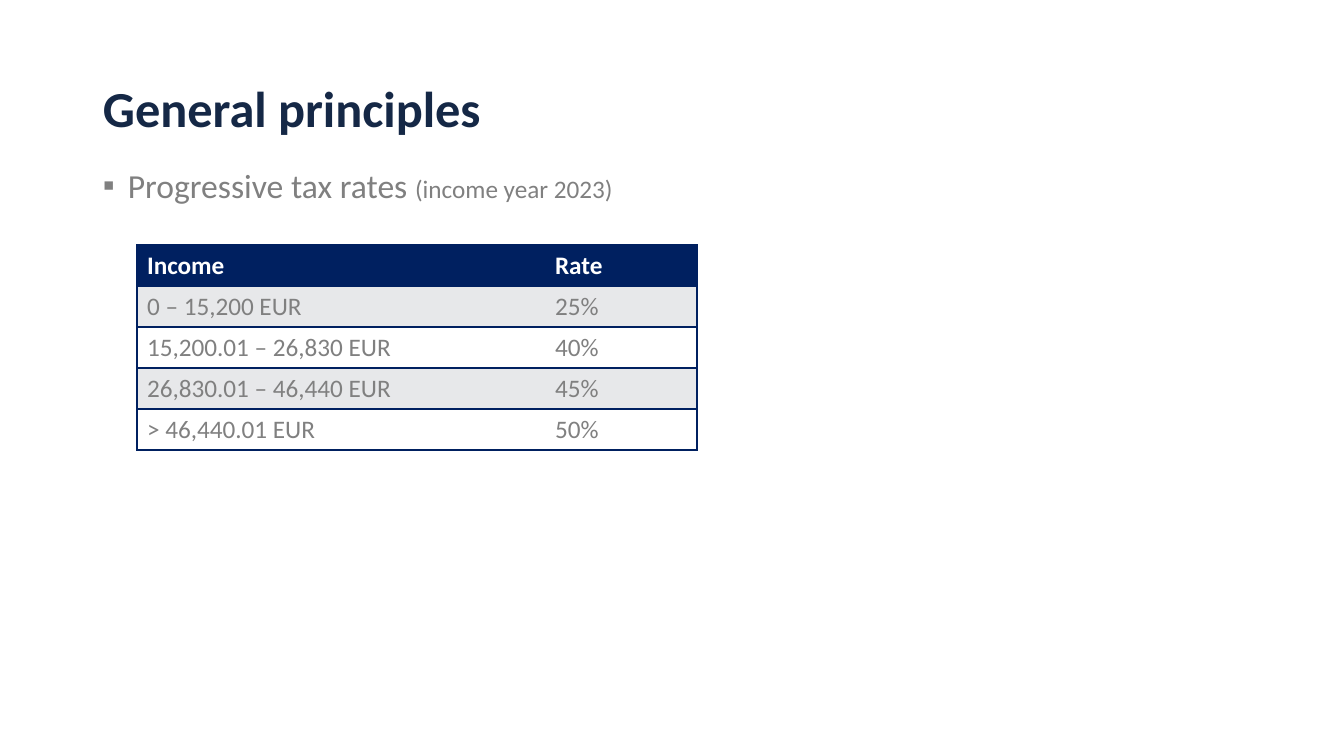
from lxml.etree import SubElement
from pptx import Presentation
from pptx.dml.color import RGBColor
from pptx.enum.text import MSO_ANCHOR
from pptx.oxml import parse_xml
from pptx.oxml.ns import nsdecls, qn
from pptx.util import Emu, Pt

EMU_PER_PX = 914400 / 100.8
NAVY = RGBColor(0x00, 0x20, 0x60)
TITLE_NAVY = RGBColor(0x15, 0x28, 0x46)
GRAY = RGBColor(0x80, 0x80, 0x80)
BAND_GRAY = RGBColor(0xE7, 0xE8, 0xEA)
WHITE = RGBColor(0xFF, 0xFF, 0xFF)
NO_STYLE = "{2D5ABB26-0587-4C30-8999-92F81FD0307C}"


def px(value):
    return Emu(round(value * EMU_PER_PX))


def add_text(paragraph, text, size=18, color=GRAY, bold=False):
    run = paragraph.add_run()
    run.text = text
    run.font.name = "Calibri"
    run.font.size = Pt(size)
    run.font.color.rgb = color
    run.font.bold = bold


presentation = Presentation()
presentation.slide_width, presentation.slide_height = px(1344), px(756)
slide = presentation.slides.add_slide(presentation.slide_layouts[6])

# Title and bullet text
paragraphs = []
for top, height, anchor in [(77, 69, MSO_ANCHOR.MIDDLE), (164, 515, MSO_ANCHOR.TOP)]:
    text_box = slide.shapes.add_textbox(px(93), px(top), px(1159), px(height))
    text_box.text_frame.word_wrap = True
    text_box.text_frame.vertical_anchor = anchor
    paragraph = text_box.text_frame.paragraphs[0]
    paragraph.line_spacing = 0.9
    paragraphs.append(paragraph)
title, bullet = paragraphs

add_text(title, "General principles", size=36, color=TITLE_NAVY, bold=True)

properties = bullet._p.get_or_add_pPr()
properties.set("marL", str(px(25)))
properties.set("indent", str(-px(25)))
SubElement(properties, qn("a:buFont"), typeface="Arial")
SubElement(properties, qn("a:buChar"), char="▪")
add_text(bullet, "Progressive tax rates ", size=24)
add_text(bullet, "(income year 2023)")

# Tax rate table
tax_rates = [
    ("Income", "Rate"),
    ("0 – 15,200 EUR", "25%"),
    ("15,200.01 – 26,830 EUR", "40%"),
    ("26,830.01 – 46,440 EUR", "45%"),
    ("> 46,440.01 EUR", "50%"),
]
column_widths = [408, 152]
row_height = 41
table = slide.shapes.add_table(
    len(tax_rates), len(column_widths), px(137), px(245),
    px(sum(column_widths)), px(row_height * len(tax_rates))).table
table.first_row = table.horz_banding = False
table._tbl.tblPr.find(qn("a:tableStyleId")).text = NO_STYLE

for column, width in zip(table.columns, column_widths):
    column.width = px(width)

for row_index, values in enumerate(tax_rates):
    table.rows[row_index].height = px(row_height)
    is_header = row_index == 0
    fill_color = NAVY if is_header else BAND_GRAY if row_index % 2 else WHITE
    for column_index, value in enumerate(values):
        cell = table.cell(row_index, column_index)
        cell.fill.solid()
        cell.fill.fore_color.rgb = fill_color
        add_text(cell.text_frame.paragraphs[0], value,
                 color=WHITE if is_header else GRAY, bold=is_header)

        # Outer side, top and bottom borders, placed before the fill
        outer_side = "lnR" if column_index else "lnL"
        cell_properties = cell._tc.get_or_add_tcPr()
        for position, side in enumerate([outer_side, "lnT", "lnB"]):
            cell_properties.insert(position, parse_xml(
                f'<a:{side} {nsdecls("a")} w="{Pt(1)}"><a:solidFill>'
                f'<a:srgbClr val="{NAVY}"/></a:solidFill></a:{side}>'))

presentation.save("out.pptx")
